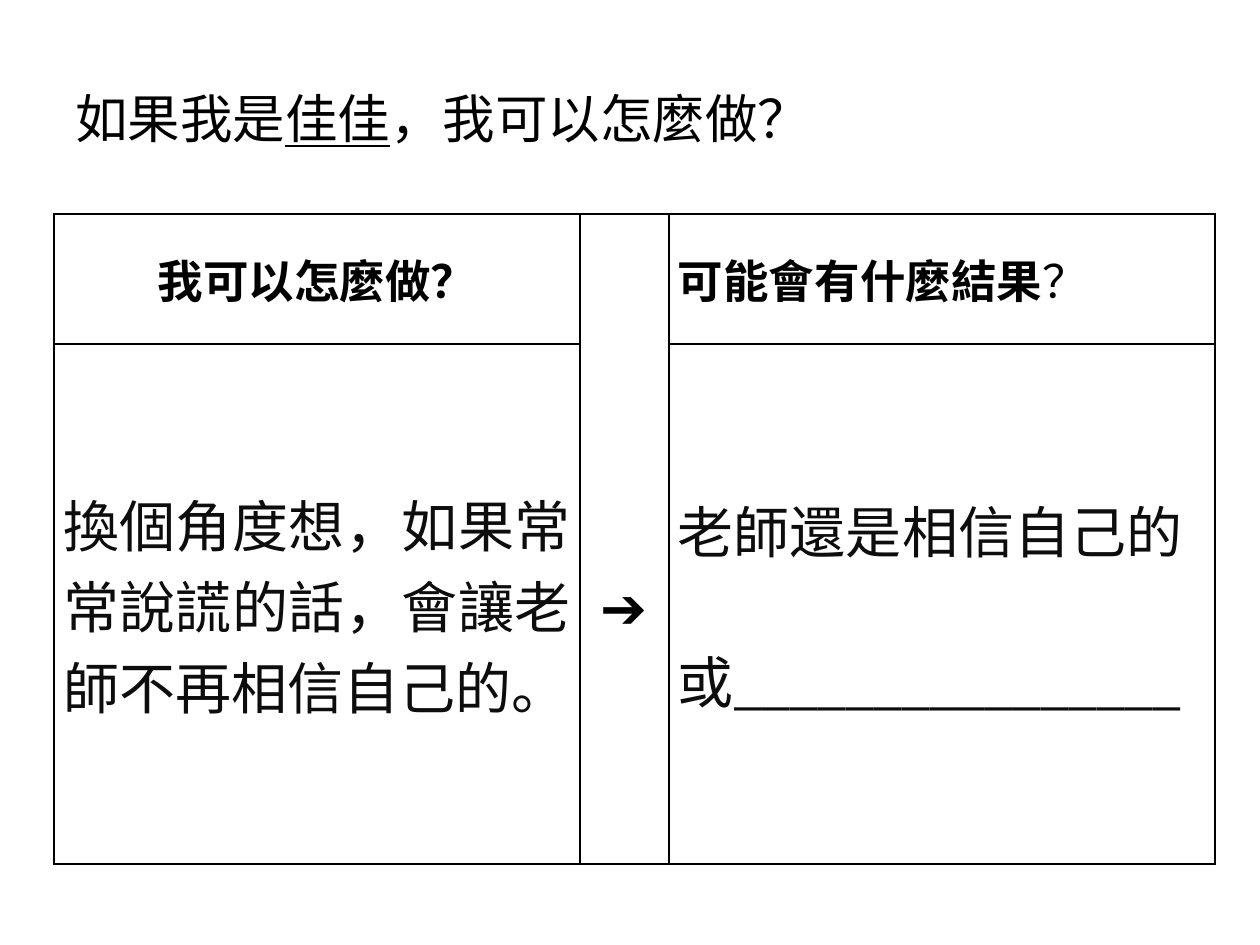
"""Build a worksheet slide that links a choice to its possible result."""
from dataclasses import dataclass
from lxml.etree import SubElement
from pptx import Presentation
from pptx.dml.color import RGBColor
from pptx.enum.text import MSO_ANCHOR, PP_ALIGN
from pptx.oxml.ns import qn
from pptx.slide import Slide
from pptx.util import Emu, Pt

BLACK = RGBColor(0x00, 0x00, 0x00)
INK = RGBColor(0x0D, 0x0D, 0x0D)
HEADING_FONT = "Noto Sans CJK SC"
BODY_FONT = "Calibri"


def px(length):
    """Turn px into EMU."""
    return Emu(round(length * 914400 / 126))


@dataclass
class Worksheet:
    """Hold the style and the current slide."""
    page: Slide
    east_asian_font: str = HEADING_FONT
    border_width: int = Pt(1)

    def span(self, para, text, size, font=HEADING_FONT, color=BLACK, bold=False, underline=False):
        """Add one run to a paragraph."""
        span = para.add_run()
        span.text = text
        span.font.size = Pt(size)
        span.font.name = font
        span.font.color.rgb = color
        span.font.bold = bold
        span.font.underline = underline
        latin = span.font._element.find(qn("a:latin"))
        east_asian = latin.makeelement(qn("a:ea"), {"typeface": self.east_asian_font})
        latin.addnext(east_asian)

    def title(self, left, top, width, height):
        """Add an empty title box and return its paragraph."""
        box = self.page.shapes.add_textbox(px(left), px(top), px(width), px(height))
        box.text_frame.word_wrap = True
        box.text_frame.vertical_anchor = MSO_ANCHOR.MIDDLE
        return box.text_frame.paragraphs[0]

    def table(self, left, top, widths, heights):
        """Add a plain table with the given column widths and row heights."""
        frame = self.page.shapes.add_table(
            len(heights), len(widths), px(left), px(top), px(sum(widths)), px(sum(heights)))
        table = frame.table
        table.first_row = table.horz_banding = False
        for column, width in zip(table.columns, widths):
            column.width = px(width)
        for row, height in zip(table.rows, heights):
            row.height = px(height)
        return table

    def cell(self, cell, sides="LRTB"):
        """Style one cell, draw its borders and return its first paragraph."""
        cell.margin_left = cell.margin_right = px(9)
        cell.margin_top = cell.margin_bottom = 0
        cell.vertical_anchor = MSO_ANCHOR.MIDDLE
        properties = cell._tc.get_or_add_tcPr()
        for side in "LRTB":
            line = SubElement(properties, qn(f"a:ln{side}"), w=str(self.border_width))
            if side in sides:
                fill = SubElement(line, qn("a:solidFill"))
                SubElement(fill, qn("a:srgbClr"), val=str(BLACK))
            else:
                SubElement(line, qn("a:noFill"))
        cell.fill.background()
        return cell.text_frame.paragraphs[0]


def main():
    """Build and save the deck."""
    deck = Presentation()
    deck.slide_width, deck.slide_height = px(1260), px(945)
    sheet = Worksheet(deck.slides.add_slide(deck.slide_layouts[6]))

    title = sheet.title(63, 38, 1134, 158)
    sheet.span(title, "如果我是", 30)
    sheet.span(title, "佳佳", 30, underline=True)
    sheet.span(title, "，我可以怎麼做？", 30)

    table = sheet.table(54, 214, [526, 89, 546], [130, 520])
    question = sheet.cell(table.cell(0, 0))
    question.alignment = PP_ALIGN.CENTER
    sheet.span(question, "我可以怎麼做？", 26, bold=True)

    sheet.cell(table.cell(0, 1), "LRT")

    outcome = sheet.cell(table.cell(0, 2))
    sheet.span(outcome, "可能會有什麼結果", 26, bold=True)
    sheet.span(outcome, "？", 26)

    choice = sheet.cell(table.cell(1, 0))
    choice.alignment = PP_ALIGN.JUSTIFY
    sheet.span(choice, "換個角度想，如果常常說謊的話，會讓老師不再相信自己的。", 32, BODY_FONT, INK)

    arrow = sheet.cell(table.cell(1, 1), "LRB")
    arrow.alignment = PP_ALIGN.CENTER
    sheet.span(arrow, "➔", 32)

    result_cell = table.cell(1, 2)
    result = sheet.cell(result_cell)
    result.alignment = PP_ALIGN.JUSTIFY
    sheet.span(result, "老師還是相信自己的", 32, BODY_FONT, INK)
    alternative = result_cell.text_frame.add_paragraph()
    alternative.space_before = Pt(39)
    sheet.span(alternative, "或________________", 32, BODY_FONT, INK)

    deck.save("out.pptx")


if __name__ == "__main__":
    main()
